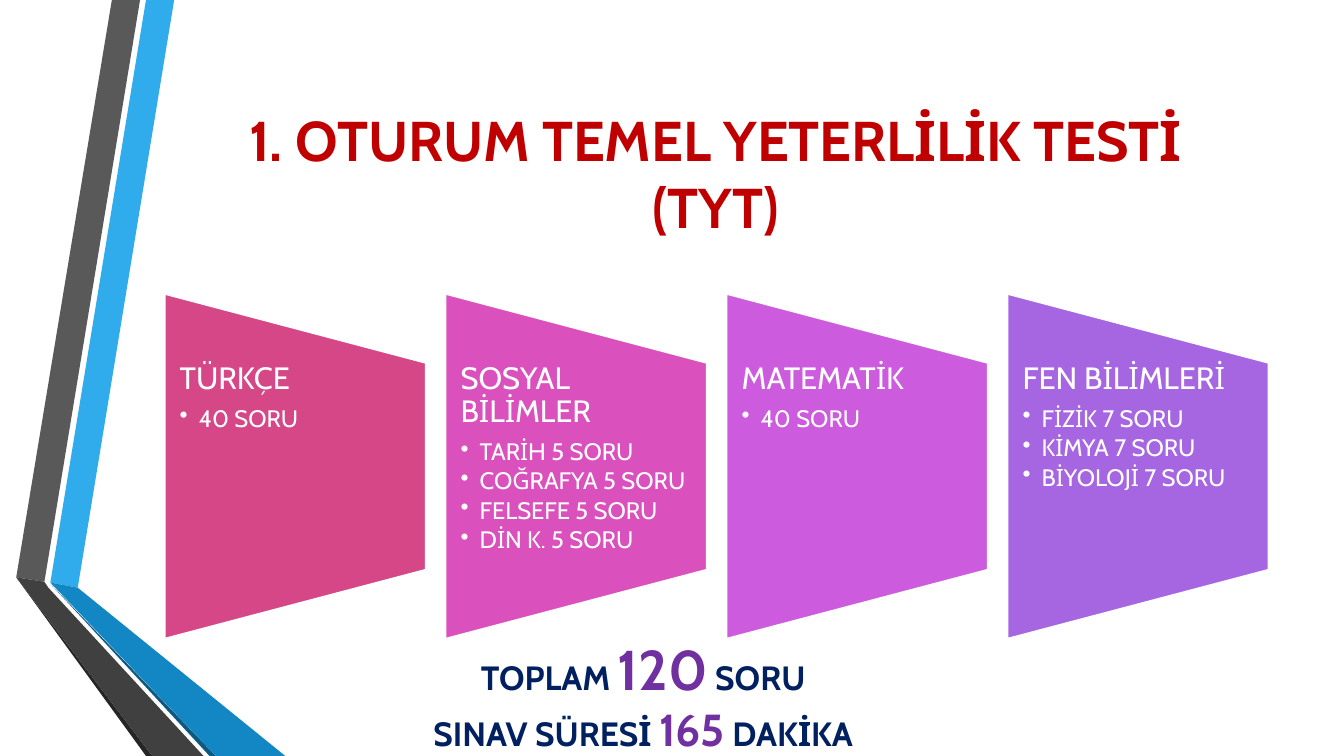
from lxml import etree
from pptx import Presentation
from pptx.dml.color import RGBColor
from pptx.enum.shapes import MSO_SHAPE
from pptx.enum.text import MSO_ANCHOR, MSO_AUTO_SIZE, PP_ALIGN
from pptx.oxml.ns import qn
from pptx.util import Cm, Pt

TRAPEZOID = MSO_SHAPE.FLOWCHART_MANUAL_OPERATION
TOP, MIDDLE = MSO_ANCHOR.TOP, MSO_ANCHOR.MIDDLE
LEFT, CENTER = PP_ALIGN.LEFT, PP_ALIGN.CENTER
NO_FIT = MSO_AUTO_SIZE.NONE
TITLE_ONLY = 5

WHITE, RED, NAVY, PURPLE = "FFFFFF", "C00000", "002060", "7030A0"

RIBBONS = [
    ("30ACEC", [(1.27, 14.68), (1.96, 14.81), (4.39, 0), (3.68, 0)]),
    ("595959", [(3.53, 0), (2.82, 0), (0.41, 14.55), (1.12, 14.66)]),
    ("262626", [(0.41, 14.55), (3.68, 19.05), (3.84, 19.05)]),
    ("0C5A82", [(1.27, 14.71), (5.28, 19.05), (5.44, 19.05)]),
    ("1287C3", [(1.27, 14.68), (5.44, 19.05), (7.19, 19.05), (1.96, 14.81)]),
    ("404040", [(5.13, 19.05), (1.22, 14.81), (1.12, 14.66), (0.41, 14.55), (3.84, 19.05)]),
]

CARDS = [
    ("D64787", "TÜRKÇE", ["40 SORU"]),
    ("DA51BD", "SOSYAL BİLİMLER",
     ["TARİH 5 SORU", "COĞRAFYA 5 SORU", "FELSEFE 5 SORU", "DİN K. 5 SORU"]),
    ("CC5BDE", "MATEMATİK", ["40 SORU"]),
    ("A666E1", "FEN BİLİMLERİ", ["FİZİK 7 SORU", "KİMYA 7 SORU", "BİYOLOJİ 7 SORU"]),
]
CARD_LEFT, CARD_PITCH = 4.15, 7.08
CARD_WIDTH, CARD_HEIGHT, CARD_MIDDLE = 6.58, 8.69, 11.75
CARD_TEXT_HEIGHT = 5.21

TOTALS = [
    [("TOPLAM ", 24, NAVY), ("120", 40, PURPLE), (" SORU", 24, NAVY)],
    [("SINAV SÜRESİ ", 24, NAVY), ("165", 32, PURPLE), (" DAKİKA", 24, NAVY)],
]


def color(value):
    return RGBColor.from_string(value)


class Painter:
    font = "Cabin"

    def __init__(self, page):
        self.page = page
        self.shapes = page.shapes

    def span(self, para, text, size, tint, bold=False):
        span = para.add_run()
        span.text = text
        span.font.name = self.font
        span.font.size = Pt(size)
        span.font.bold = bold
        span.font.color.rgb = color(tint)

    def fill(self, shape, tint):
        shape.shadow.inherit = False
        shape.fill.solid()
        shape.fill.fore_color.rgb = color(tint)

    def ribbon(self, tint, points):
        corners = [(Cm(x), Cm(y)) for x, y in points]
        builder = self.shapes.build_freeform(*corners[0])
        builder.add_line_segments(corners[1:], close=True)
        shape = builder.convert_to_shape()
        self.fill(shape, tint)
        shape.line.fill.background()

    def title(self, lines, left, top, width, height):
        box = self.shapes.title
        box.left, box.top, box.width, box.height = map(Cm, (left, top, width, height))
        frame = box.text_frame
        frame.word_wrap, frame.auto_size = True, NO_FIT
        frame.vertical_anchor = MIDDLE
        para = frame.paragraphs[0]
        para.alignment = CENTER
        for index, line in enumerate(lines):
            if index:
                para.add_line_break()
            self.span(para, line, 40, RED, True)

    def text_box(self, left, top, width, height, anchor):
        box = self.shapes.add_textbox(Cm(left), Cm(top), Cm(width), Cm(height))
        frame = box.text_frame
        frame.word_wrap, frame.auto_size = True, NO_FIT
        frame.vertical_anchor = anchor
        return frame

    def paragraph(self, frame, index, align):
        para = frame.add_paragraph() if index else frame.paragraphs[0]
        para.alignment = align
        return para

    def bullet(self, para):
        para.level = 1
        properties = para._p.get_or_add_pPr()
        properties.set("marL", str(Cm(0.48)))
        properties.set("indent", str(-Cm(0.48)))
        etree.SubElement(properties, qn("a:buChar")).set("char", "•")

    def card(self, left, tint, heading, items):
        shape = self.shapes.add_shape(
            TRAPEZOID,
            Cm(left + (CARD_WIDTH - CARD_HEIGHT) / 2), Cm(CARD_MIDDLE - CARD_WIDTH / 2),
            Cm(CARD_HEIGHT), Cm(CARD_WIDTH))
        shape.rotation = 270
        self.fill(shape, tint)
        shape.line.color.rgb = color(WHITE)
        shape.line.width = Pt(1.25)

        frame = self.text_box(left, CARD_MIDDLE - CARD_TEXT_HEIGHT / 2,
                              CARD_WIDTH, CARD_TEXT_HEIGHT, TOP)
        frame.margin_left, frame.margin_right = Cm(0.38), Cm(0.41)
        frame.margin_top = frame.margin_bottom = 0
        for index, text in enumerate([heading, *items]):
            para = self.paragraph(frame, index, LEFT)
            size, gap = (17, 0.15) if index else (22, 0.35)
            para.line_spacing = 0.9
            para.space_after = Pt(size * gap)
            if index:
                self.bullet(para)
            self.span(para, text, size, WHITE)

    def totals(self, lines, left, top, width, height):
        frame = self.text_box(left, top, width, height, MIDDLE)
        for index, line in enumerate(lines):
            para = self.paragraph(frame, index, CENTER)
            for text, size, tint in line:
                self.span(para, text, size, tint, True)


def main():
    deck = Presentation()
    deck.slide_width, deck.slide_height = Cm(33.87), Cm(19.05)
    painter = Painter(deck.slides.add_slide(deck.slide_layouts[TITLE_ONLY]))
    for tint, points in RIBBONS:
        painter.ribbon(tint, points)
    painter.title(["1. OTURUM TEMEL YETERLİLİK TESTİ", "(TYT)"], 4.11, 1.9, 27.84, 4.88)
    for index, (tint, heading, items) in enumerate(CARDS):
        painter.card(CARD_LEFT + index * CARD_PITCH, tint, heading, items)
    painter.totals(TOTALS, 8.59, 15.98, 15.24, 3.07)
    deck.save("out.pptx")


if __name__ == "__main__":
    main()
